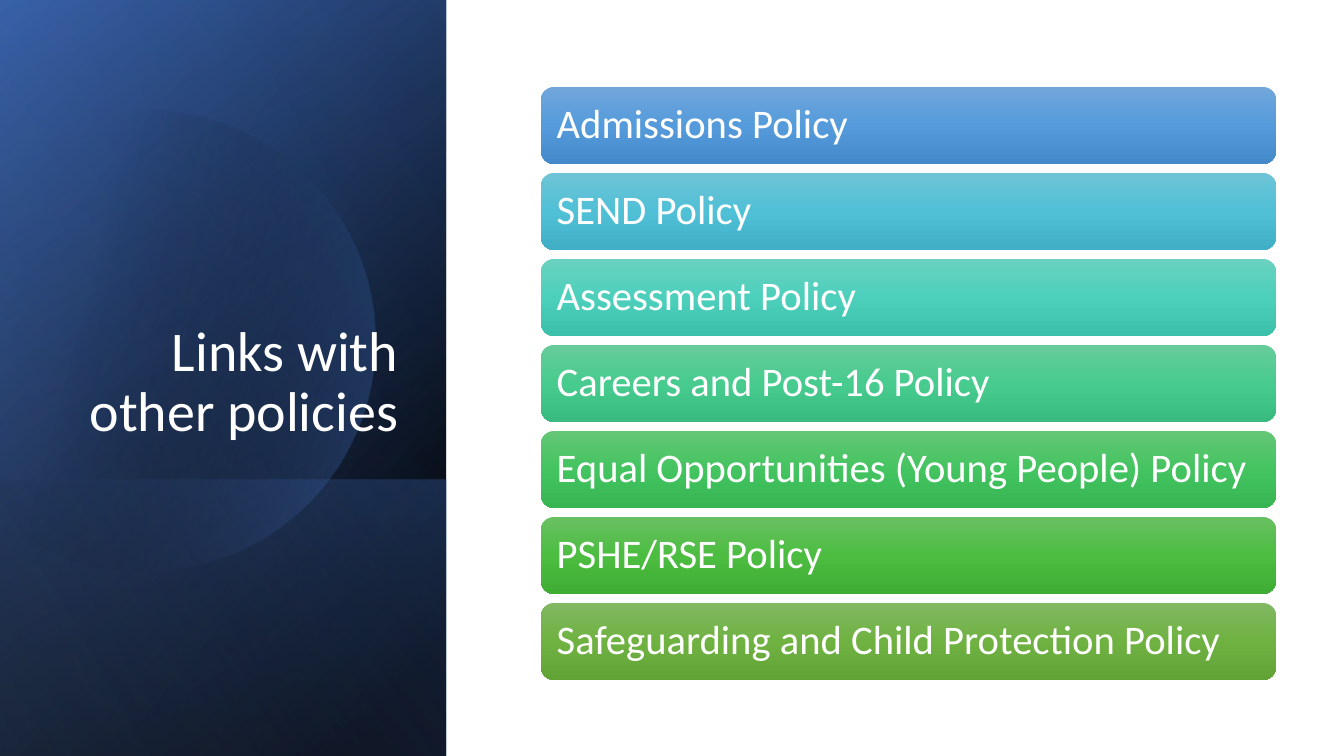
import math

from pptx import Presentation
from pptx.dml.color import RGBColor
from pptx.enum import shapes, text
from pptx.oxml import parse_xml
from pptx.oxml.ns import nsdecls, qn
from pptx.util import Pt

PX = 914400 / 100.8


def px(length):
    return round(length * PX)


def color(value):
    return RGBColor.from_string(value)


class SlideBuilder:
    font = "Calibri"
    ink = "FFFFFF"
    line_spacing = 0.9

    def __init__(self, slide):
        self.slide = slide

    def finish(self, shape, stops, angle):
        shape.shadow.inherit = False
        shape.line.fill.background()
        shape.fill.gradient()
        marks = "".join(
            f'<a:gs pos="{pos * 1000}"><a:srgbClr val="{color(tint)}">'
            f'<a:alpha val="{alpha * 1000}"/></a:srgbClr></a:gs>'
            for pos, tint, alpha in stops
        )
        gradient = parse_xml(
            f'<a:gradFill {nsdecls("a")} rotWithShape="1"><a:gsLst>{marks}</a:gsLst>'
            f'<a:lin ang="{angle * 60000}" scaled="0"/></a:gradFill>'
        )
        properties = shape.element.spPr
        properties.replace(properties.find(qn("a:gradFill")), gradient)

    def turned_panel(self, left, top, width, height, stops, angle):
        panel = self.slide.shapes.add_shape(
            shapes.MSO_SHAPE.RECTANGLE, px(left), px(top), px(width), px(height)
        )
        panel.rotation = 90
        panel.element.spPr.xfrm.set("flipH", "1")
        self.finish(panel, stops, angle)

    def clipped_circle(self, x, y, radius, clip, stops, angle):
        limit = math.degrees(math.acos((clip - x) / radius))
        steps = 120
        turns = [math.radians(limit * (2 * i / steps - 1)) for i in range(steps + 1)]
        points = [
            (px(x + radius * math.cos(t)), px(y + radius * math.sin(t))) for t in turns
        ]
        outline = self.slide.shapes.build_freeform(*points[0])
        outline.add_line_segments(points[1:], close=True)
        self.finish(outline.convert_to_shape(), stops, angle)

    def set_text(self, frame, words, size, align, anchor):
        frame.word_wrap = True
        frame.vertical_anchor = anchor
        frame.text = words
        paragraph = frame.paragraphs[0]
        paragraph.alignment = align
        paragraph.line_spacing = self.line_spacing
        paragraph.font.name = self.font
        paragraph.font.size = Pt(size)
        paragraph.font.color.rgb = color(self.ink)

    def title(self, left, top, width, height, words):
        heading = self.slide.shapes.add_textbox(px(left), px(top), px(width), px(height))
        self.set_text(heading.text_frame, words, 40, text.PP_ALIGN.RIGHT, text.MSO_ANCHOR.BOTTOM)

    def card(self, left, top, width, height, words, tints):
        card = self.slide.shapes.add_shape(
            shapes.MSO_SHAPE.ROUNDED_RECTANGLE, px(left), px(top), px(width), px(height)
        )
        self.finish(card, [(i * 50, tint, 100) for i, tint in enumerate(tints)], 90)
        frame = card.text_frame
        frame.margin_left = frame.margin_right = px(12)
        self.set_text(frame, words, 29, text.PP_ALIGN.LEFT, text.MSO_ANCHOR.MIDDLE)


POLICIES = [
    ("Admissions Policy", ("71A6DB", "559BDB", "448ACA")),
    ("SEND Policy", ("6EC4D6", "50C0D6", "40AFC5")),
    ("Assessment Policy", ("6AD1C0", "4CD0BC", "3CC0AC")),
    ("Careers and Post-16 Policy", ("67CC9A", "47CB8E", "39BB7F")),
    ("Equal Opportunities (Young People) Policy", ("64C677", "44C460", "36B552")),
    ("PSHE/RSE Policy", ("69C062", "4CBD41", "3FAD34")),
    ("Safeguarding and Child Protection Policy", ("81B861", "6FB242", "62A336")),
]


def main():
    deck = Presentation()
    deck.slide_width, deck.slide_height = px(1344), px(756)
    page = SlideBuilder(deck.slides.add_slide(deck.slide_layouts[6]))

    sidebar = (-155, 155, 756, 446)
    page.turned_panel(*sidebar, [(8, "000000", 100), (100, "2F5597", 100)], 50)
    page.turned_panel(*sidebar, [(0, "000000", 0), (99, "4472C4", 46)], 30)
    page.turned_panel(85, 395, 276, 446, [(2, "4472C4", 29), (100, "000000", 30)], 130)
    page.clipped_circle(144, 341, 231, -15, [(29, "000000", 0), (100, "4472C4", 43)], 14)
    page.turned_panel(*sidebar, [(0, "000000", 0), (99, "8FAADC", 11)], 120)

    page.title(64, 185, 344, 264, "Links with other policies")
    for row, (policy, tints) in enumerate(POLICIES):
        page.card(541, 87 + 86 * row, 735, 77, policy, tints)

    deck.save("out.pptx")


if __name__ == "__main__":
    main()
